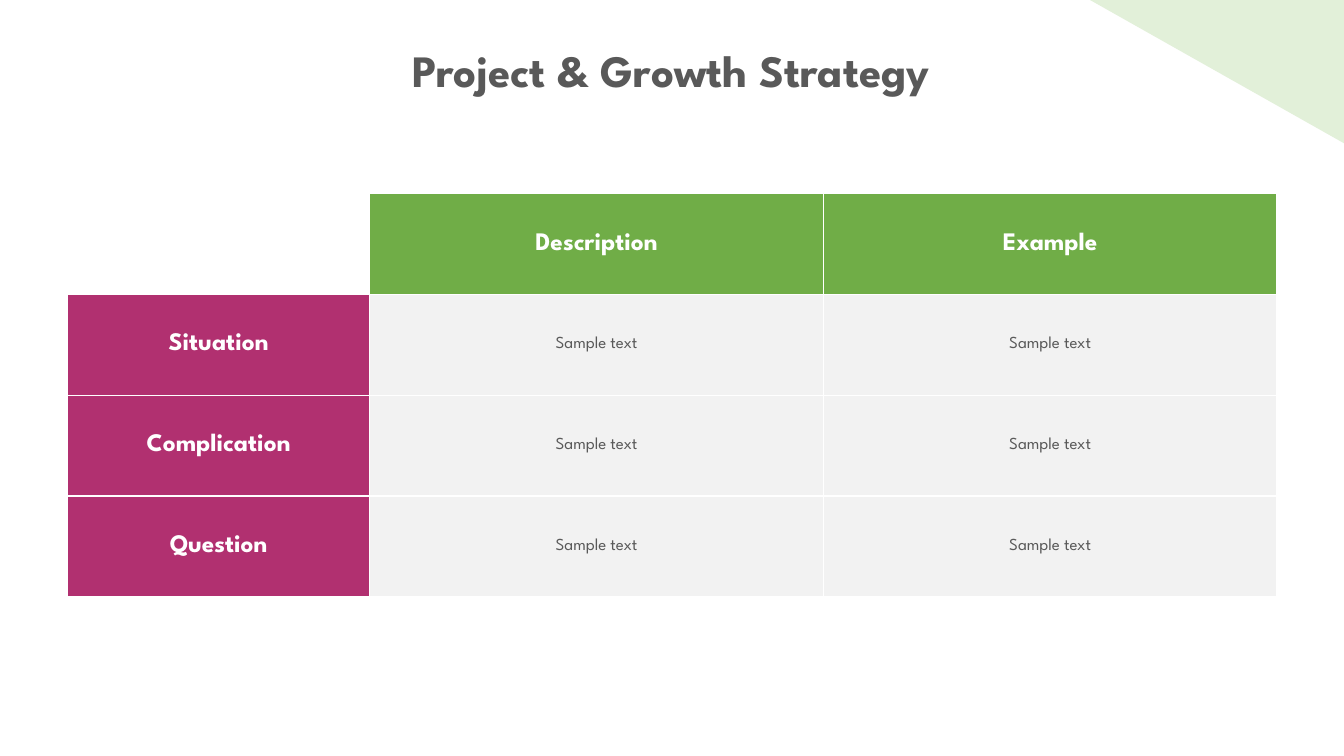
from dataclasses import dataclass

from lxml import etree
from pptx import Presentation
from pptx import util as u
from pptx.dml.color import RGBColor
from pptx.enum import shapes, text
from pptx.oxml import ns


@dataclass(frozen=True)
class Theme:
    font: str = "League Spartan"
    ink: str = "595959"
    white: str = "FFFFFF"
    corner: str = "E2F0D9"
    column_head: str = "70AD47"
    row_head: str = "B13070"
    body: str = "F2F2F2"
    title_size: int = 32
    head_size: int = 18
    body_size: int = 12
    border_width: int = 1


THEME = Theme()

GRID = [
    ["", "Description", "Example"],
    ["Situation", "Sample text", "Sample text"],
    ["Complication", "Sample text", "Sample text"],
    ["Question", "Sample text", "Sample text"],
]
COLUMN_WIDTHS = [u.Cm(7.62), u.Cm(11.43), u.Cm(11.43)]
ROW_HEIGHT = u.Cm(2.54)


def paint(fill, color):
    fill.solid()
    fill.fore_color.rgb = RGBColor.from_string(color)


def write(frame, words, size, color, bold):
    """Set one centred paragraph in the theme font."""
    frame.text = words
    para = frame.paragraphs[0]
    para.alignment = text.PP_ALIGN.CENTER
    font = para.runs[0].font
    font.name = THEME.font
    font.size = u.Pt(size)
    font.bold = bold
    font.color.rgb = RGBColor.from_string(color)


def add_corner(page):
    width, height = u.Cm(6.4), u.Cm(3.61)
    corner = page.shapes.add_shape(
        shapes.MSO_SHAPE.RIGHT_TRIANGLE, u.Cm(33.87) - width, 0, width, height
    )
    corner.rotation = 180
    corner.shadow.inherit = False
    corner.line.fill.background()
    paint(corner.fill, THEME.corner)


def add_title(page, words):
    box = page.shapes.add_textbox(u.Cm(7.92), u.Cm(0.94), u.Cm(18.01), u.Cm(1.62))
    box.text_frame.word_wrap = True
    box.text_frame.auto_size = text.MSO_AUTO_SIZE.SHAPE_TO_FIT_TEXT
    write(box.text_frame, words, THEME.title_size, THEME.ink, True)


def add_borders(cell):
    """Draw all four cell edges; call before the cell is filled."""
    properties = cell._tc.get_or_add_tcPr()
    for side in ("lnL", "lnR", "lnT", "lnB"):
        line = etree.SubElement(
            properties, ns.qn(f"a:{side}"), w=str(u.Pt(THEME.border_width))
        )
        solid = etree.SubElement(line, ns.qn("a:solidFill"))
        etree.SubElement(solid, ns.qn("a:srgbClr"), val=THEME.white)


def style_cell(cell, words, row, column):
    add_borders(cell)
    cell.vertical_anchor = text.MSO_ANCHOR.MIDDLE
    if not words:
        cell.fill.background()
    elif row == 0 or column == 0:
        paint(cell.fill, THEME.column_head if row == 0 else THEME.row_head)
        write(cell.text_frame, words, THEME.head_size, THEME.white, True)
    else:
        paint(cell.fill, THEME.body)
        write(cell.text_frame, words, THEME.body_size, THEME.ink, False)


def add_grid(page, grid):
    frame = page.shapes.add_table(
        len(grid), len(COLUMN_WIDTHS), u.Cm(1.7), u.Cm(4.88),
        sum(COLUMN_WIDTHS), ROW_HEIGHT * len(grid),
    )
    table = frame.table
    table.horz_banding = False
    for column, width in zip(table.columns, COLUMN_WIDTHS):
        column.width = width
    for row, entries in enumerate(grid):
        table.rows[row].height = ROW_HEIGHT
        for column, words in enumerate(entries):
            style_cell(table.cell(row, column), words, row, column)


def main():
    deck = Presentation()
    deck.slide_width, deck.slide_height = u.Cm(33.87), u.Cm(19.05)
    page = deck.slides.add_slide(deck.slide_layouts[6])
    paint(page.background.fill, THEME.white)
    add_corner(page)
    add_title(page, "Project & Growth Strategy")
    add_grid(page, GRID)
    deck.save("out.pptx")


if __name__ == "__main__":
    main()
